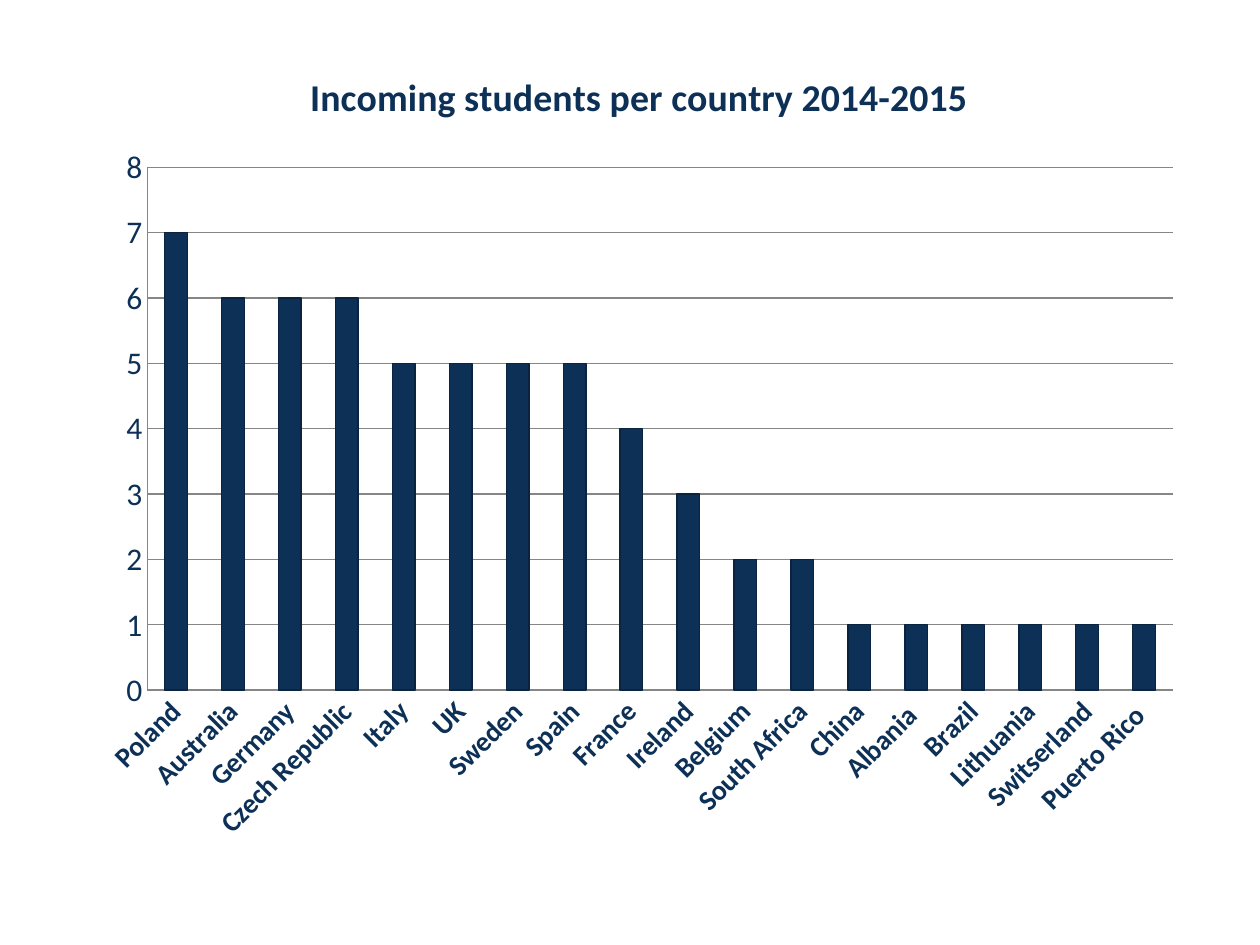
from pptx import Presentation, util as u
from pptx.chart.data import CategoryChartData
from pptx.dml.color import RGBColor
from pptx.enum import chart as ch
from pptx.oxml import parse_xml
from pptx.oxml.ns import nsdecls, qn

PX = 914400 // 126
COLORS = {"navy": "0D3057", "edge": "0A2440", "grid": "868686"}
FONT = "Calibri"
STUDENTS = {
    "Poland": 7, "Australia": 6, "Germany": 6, "Czech Republic": 6,
    "Italy": 5, "UK": 5, "Sweden": 5, "Spain": 5, "France": 4,
    "Ireland": 3, "Belgium": 2, "South Africa": 2, "China": 1,
    "Albania ": 1, "Brazil": 1, "Lithuania": 1, "Switserland": 1,
    "Puerto Rico ": 1,
}
CHART_BOX = (84, 40, 1111, 818)
PLOT_BOX = (147, 168, 1026, 523)


def rgb(name):
    return RGBColor.from_string(COLORS[name])


def format_font(font, size, bold=False, color="navy"):
    font.name, font.size, font.bold = FONT, u.Pt(size), bold
    font.color.rgb = rgb(color)


def add_text(tf, text, **fmt):
    r = tf.paragraphs[0].add_run()
    r.text = text
    format_font(r.font, **fmt)


def format_line(line, color, width=0.75):
    line.color.rgb = rgb(color)
    line.width = u.Pt(width)


def place_plot(chart):
    """Fix the inner plot area as fractions of the chart frame."""
    left, top, width, height = CHART_BOX
    x, y, w, h = PLOT_BOX
    parts = {"x": (x - left) / width, "y": (y - top) / height,
             "w": w / width, "h": h / height}
    modes = "".join(f'<c:{k}Mode val="edge"/>' for k in "xy")
    values = "".join(f'<c:{k} val="{v:.3f}"/>' for k, v in parts.items())
    layout = parse_xml(
        f'<c:layout {nsdecls("c")}><c:manualLayout>'
        f'<c:layoutTarget val="inner"/>{modes}{values}'
        '</c:manualLayout></c:layout>')
    area = chart._chartSpace.chart.plotArea
    for old in area.findall(qn("c:layout")):
        area.remove(old)
    area.insert(0, layout)


def format_axis(axis, size, bold=False):
    axis.major_tick_mark = axis.minor_tick_mark = ch.XL_TICK_MARK.NONE
    format_font(axis.tick_labels.font, size, bold)
    format_line(axis.format.line, "grid")


def add_student_chart(s):
    data = CategoryChartData()
    data.categories = list(STUDENTS)
    data.add_series("Series 1", list(STUDENTS.values()))
    frame = s.shapes.add_chart(ch.XL_CHART_TYPE.COLUMN_CLUSTERED,
                               *(n * PX for n in CHART_BOX), data)
    chart = frame.chart
    format_font(chart.font, 18)
    chart.has_legend = False
    chart.has_title = True
    add_text(chart.chart_title.text_frame,
             "Incoming students per country 2014-2015", size=21.6, bold=True)
    chart.chart_title.include_in_layout = False

    # Columns
    plot = chart.plots[0]
    plot.gap_width = 150
    plot.vary_by_categories = False
    bars = plot.series[0].format
    bars.fill.solid()
    bars.fill.fore_color.rgb = rgb("navy")
    format_line(bars.line, "edge")

    # Axes, with slanted country names
    format_axis(chart.category_axis, 16, bold=True)
    body = chart.category_axis._element.find(qn("c:txPr")).find(qn("a:bodyPr"))
    body.set("rot", str(-45 * 60000))
    body.set("vert", "horz")
    axis = chart.value_axis
    format_axis(axis, 18)
    axis.minimum_scale, axis.maximum_scale, axis.major_unit = 0, 8, 1
    axis.has_major_gridlines = True
    format_line(axis.major_gridlines.format.line, "grid")
    place_plot(chart)


def main():
    prs = Presentation()
    prs.slide_width, prs.slide_height = u.Inches(10), u.Inches(7.5)
    s = prs.slides.add_slide(prs.slide_layouts[6])
    add_student_chart(s)
    prs.save("out.pptx")


if __name__ == "__main__":
    main()
